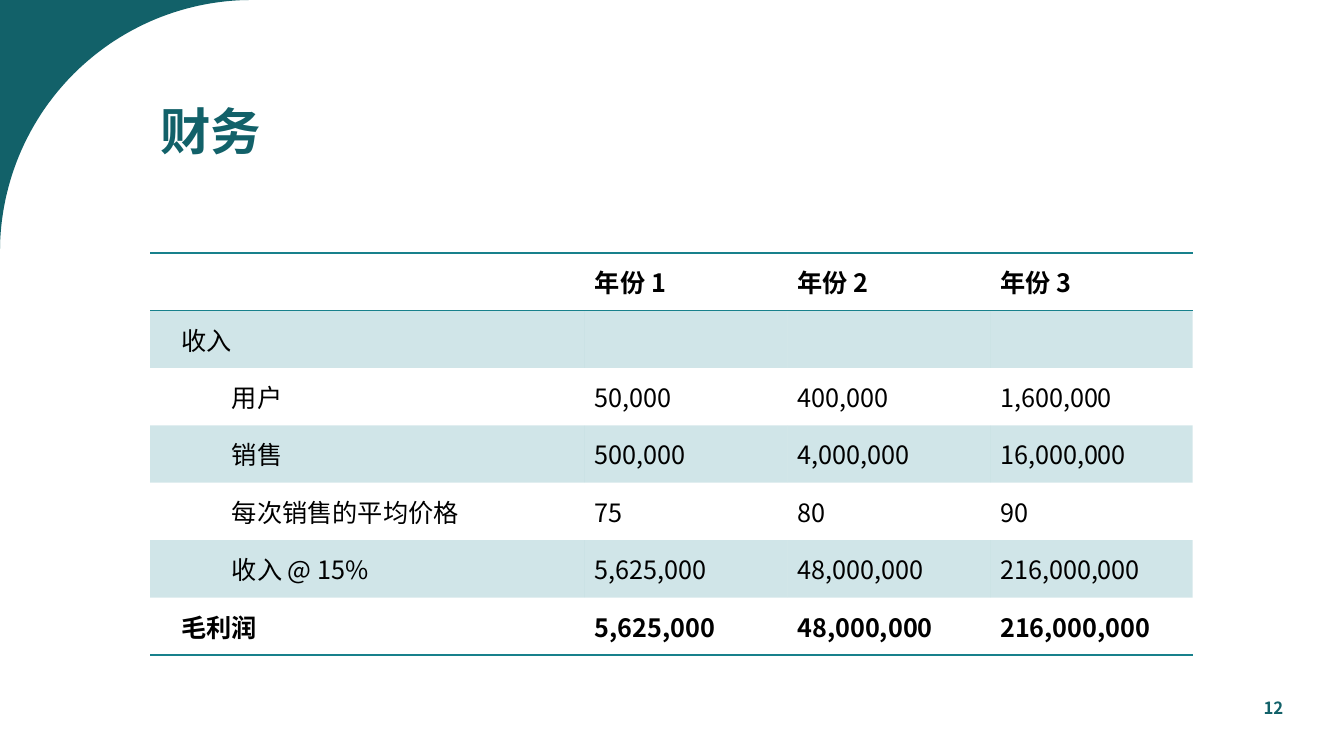
from math import cos, pi, sin

from lxml.etree import SubElement
from pptx import Presentation
from pptx.dml.color import RGBColor as RGB
from pptx.enum.text import MSO_ANCHOR as ANCHOR, PP_ALIGN as ALIGN
from pptx.oxml import parse_xml
from pptx.oxml.ns import nsdecls, qn
from pptx.util import Pt

PX = 9144
FONT = "Noto Sans CJK SC"
COLORS = {"dark": "126169", "teal": "18818C", "text": "000000"}
WIDTHS = [431, 201, 201, 201]
ROW_HEIGHT = 57
ROWS = [
    ["", "年份 1", "年份 2", "年份 3"],
    ["收入", "", "", ""],
    ["用户", "50,000", "400,000", "1,600,000"],
    ["销售", "500,000", "4,000,000", "16,000,000"],
    ["每次销售的平均价格", "75", "80", "90"],
    ["收入 @ 15%", "5,625,000", "48,000,000", "216,000,000"],
    ["毛利润", "5,625,000", "48,000,000", "216,000,000"],
]


class Deck:
    def __init__(self, width, height):
        self.prs = Presentation()
        self.prs.slide_width = width * PX
        self.prs.slide_height = height * PX
        self.s = self.prs.slides.add_slide(self.prs.slide_layouts[6])

    def style(self, p, size, color, bold):
        f = p.font
        f.name, f.size, f.bold = FONT, Pt(size), bold
        f.color.rgb = RGB.from_string(COLORS[color])
        rpr = p._p.pPr.find(qn("a:defRPr"))
        SubElement(rpr, qn("a:ea")).set("typeface", FONT)

    def text(self, x, y, w, h, text, size, align=ALIGN.LEFT):
        tf = self.s.shapes.add_textbox(x * PX, y * PX, w * PX, h * PX).text_frame
        tf.word_wrap = True
        tf.vertical_anchor = ANCHOR.MIDDLE
        p = tf.paragraphs[0]
        p.text, p.alignment = text, align
        self.style(p, size, "dark", True)
        return p

    def corner(self, radius, steps=60):
        angles = [pi / 2 * i / steps for i in range(steps + 1)]
        arc = [(round(radius * PX * (1 - sin(a))), round(radius * PX * (1 - cos(a))))
               for a in angles]
        builder = self.s.shapes.build_freeform(0, 0)
        builder.add_line_segments(arc)
        sp = builder.convert_to_shape()
        sp.shadow.inherit = False
        sp.fill.solid()
        sp.fill.fore_color.rgb = RGB.from_string(COLORS["dark"])
        sp.line.fill.background()

    def borders(self, cell, ruled):
        tcpr = cell._tc.get_or_add_tcPr()
        for i, side in enumerate("LRTB"):
            fill = "<a:noFill/>"
            if side in ruled:
                fill = f'<a:solidFill><a:srgbClr val="{COLORS["teal"]}"/></a:solidFill>'
            tcpr.insert(i, parse_xml(
                f'<a:ln{side} {nsdecls("a")} w="12700">{fill}</a:ln{side}>'))

    def cell(self, cell, text, bold, banded, ruled):
        cell.vertical_anchor = ANCHOR.MIDDLE
        p = cell.text_frame.paragraphs[0]
        p.text = text
        self.style(p, 18, "text", bold)
        if banded:
            cell.fill.solid()
            cell.fill.fore_color.rgb = RGB.from_string(COLORS["teal"])
            color = cell._tc.tcPr.find(".//" + qn("a:srgbClr"))
            SubElement(color, qn("a:alpha")).set("val", "20000")
        else:
            cell.fill.background()
        self.borders(cell, ruled)
        return p

    def table(self, x, y, widths, row_height, rows):
        last = len(rows) - 1
        t = self.s.shapes.add_table(len(rows), len(widths), x * PX, y * PX,
                                    sum(widths) * PX, len(rows) * row_height * PX).table
        t.horz_banding = t.first_row = False
        for column, width in zip(t.columns, widths):
            column.width = width * PX
        for r, row in enumerate(rows):
            t.rows[r].height = row_height * PX
            ruled = {0: "TB", 1: "T", last: "B"}.get(r, "")
            for c, text in enumerate(row):
                cell = t.cell(r, c)
                p = self.cell(cell, text, r in (0, last), r % 2 == 1, ruled)
                if c == 0 and r > 0:
                    cell.margin_left = 31 * PX
                    if 1 < r < last:
                        p._p.pPr.set("marL", str(50 * PX))
                        p._p.pPr.set("indent", "0")


def main():
    deck = Deck(1333, 750)
    deck.corner(250)
    deck.text(149, 38, 1033, 191, "财务", 36).line_spacing = 0.9
    deck.table(149, 251, WIDTHS, ROW_HEIGHT, ROWS)
    deck.text(1192, 654, 142, 96, "12", 12, ALIGN.CENTER)
    deck.prs.save("out.pptx")


if __name__ == "__main__":
    main()
